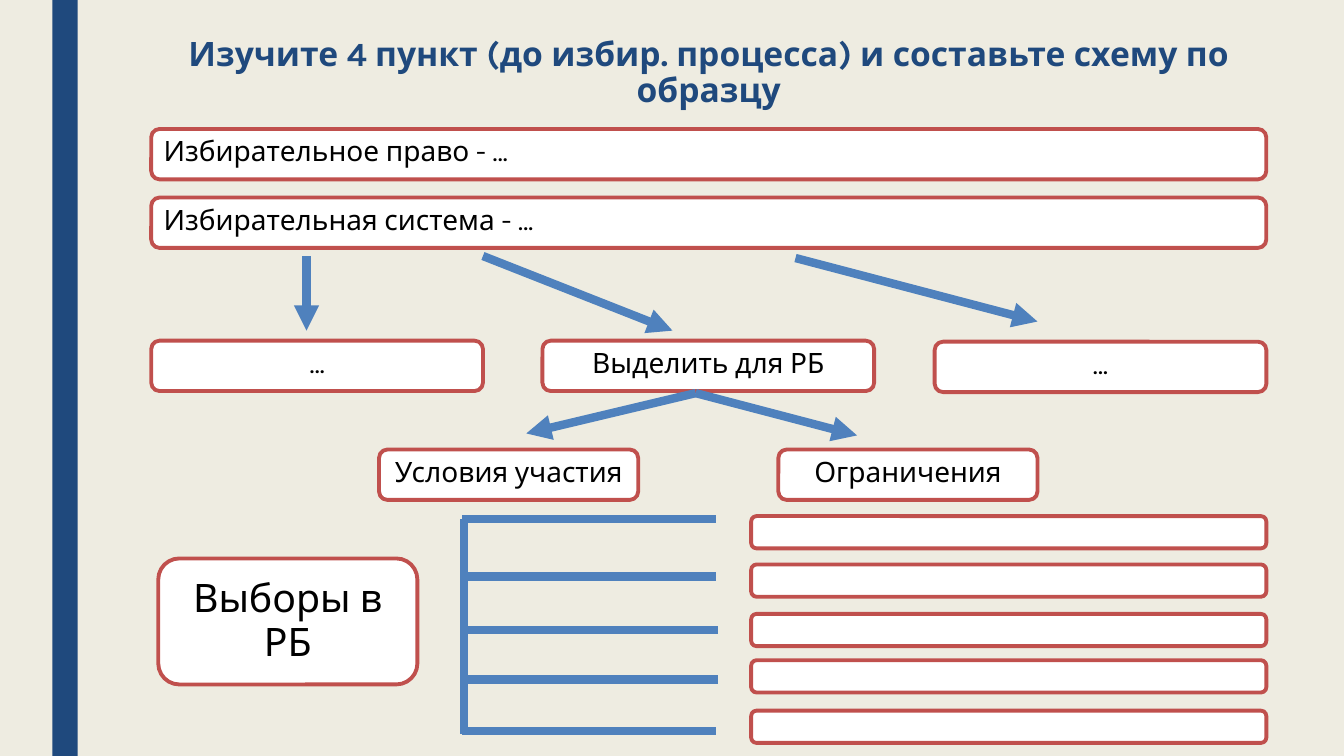
from dataclasses import dataclass

from lxml import etree
from pptx import Presentation
from pptx.dml.color import RGBColor
from pptx.enum.shapes import MSO_CONNECTOR, MSO_SHAPE
from pptx.enum.text import MSO_ANCHOR, PP_ALIGN
from pptx.oxml.ns import qn
from pptx.util import Inches, Pt

RECTANGLE = MSO_SHAPE.RECTANGLE
ROUNDED = MSO_SHAPE.ROUNDED_RECTANGLE
STRAIGHT = MSO_CONNECTOR.STRAIGHT
LEFT, CENTER = PP_ALIGN.LEFT, PP_ALIGN.CENTER
TOP, MIDDLE = MSO_ANCHOR.TOP, MSO_ANCHOR.MIDDLE

FONT = "Karla"
COLORS = {
    "background": "EEECE1",
    "navy": "1F497D",
    "red": "C0504D",
    "blue": "4F81BD",
    "white": "FFFFFF",
    "black": "000000",
}


@dataclass
class Box:
    left: float
    top: float
    width: float
    height: float = 0.5
    text: str = ""
    align: PP_ALIGN = CENTER
    anchor: MSO_ANCHOR = TOP
    size: int = 20


@dataclass
class Line:
    start: tuple[float, float]
    end: tuple[float, float]
    arrow: bool = False


MARGIN, FULL_WIDTH = 1.5, 11.06
KIND_WIDTH, TOPIC_WIDTH = 3.29, 2.57
ANSWER_TOPS = [5.12, 5.6, 6.09, 6.55, 7.05]
BRANCH_LENGTH = 2.52
BRANCH_STARTS = [(4.58, 5.15), (4.58, 5.72), (4.6, 6.25), (4.6, 6.74), (4.58, 7.25)]

BOXES = [
    # Definitions
    Box(MARGIN, 1.28, FULL_WIDTH, text="Избирательное право - …", align=LEFT),
    Box(MARGIN, 1.96, FULL_WIDTH, text="Избирательная система - …", align=LEFT),
    # Kinds of electoral system
    Box(MARGIN, 3.38, KIND_WIDTH, text="…"),
    Box(5.38, 3.38, KIND_WIDTH, text="Выделить для РБ"),
    Box(9.27, 3.39, KIND_WIDTH, text="…"),
    # Topics of participation
    Box(3.76, 4.46, TOPIC_WIDTH, text="Условия участия"),
    Box(7.72, 4.46, TOPIC_WIDTH, text="Ограничения"),
    Box(1.57, 5.54, TOPIC_WIDTH, 1.25, "Выборы в РБ", anchor=MIDDLE, size=28),
    # Empty answers
    *(Box(7.45, top, 5.11, 0.32) for top in ANSWER_TOPS),
]

LINES = [
    # Arrows to the kinds and topics
    Line((3.04, 2.54), (3.04, 3.28), True),
    Line((4.79, 2.54), (6.67, 3.28), True),
    Line((7.89, 2.56), (10.29, 3.19), True),
    Line((6.9, 3.9), (5.22, 4.3), True),
    Line((6.9, 3.9), (8.5, 4.32), True),
    # Bracket with branches
    Line((4.6, 5.15), (4.6, 7.28)),
    *(Line((x + BRANCH_LENGTH, y), (x, y)) for x, y in BRANCH_STARTS),
]


def rgb(name: str) -> RGBColor:
    return RGBColor.from_string(COLORS[name])


def write(shape, text: str, size: int, color: str, align: PP_ALIGN,
          anchor: MSO_ANCHOR, spacing: float, bold: bool = False) -> None:
    frame = shape.text_frame
    frame.word_wrap = True
    frame.vertical_anchor = anchor
    para = frame.paragraphs[0]
    para.text = text
    para.alignment = align
    para.line_spacing = spacing
    para.space_before = Pt(0)
    para.font.name = FONT
    para.font.size = Pt(size)
    para.font.bold = bold
    para.font.color.rgb = rgb(color)


def draw_box(page, box: Box) -> None:
    shape = page.shapes.add_shape(ROUNDED, Inches(box.left), Inches(box.top),
                                  Inches(box.width), Inches(box.height))
    shape.shadow.inherit = False
    shape.fill.solid()
    shape.fill.fore_color.rgb = rgb("white")
    shape.line.color.rgb = rgb("red")
    shape.line.width = Pt(2.75)
    if box.text:
        write(shape, box.text, box.size, "black", box.align, box.anchor, 0.94)


def draw_line(page, line: Line) -> None:
    connector = page.shapes.add_connector(
        STRAIGHT, *(Inches(value) for value in line.start + line.end))
    connector.line.color.rgb = rgb("blue")
    connector.line.width = Pt(6)
    properties = connector._element.spPr
    if line.arrow:
        outline = properties.find(qn("a:ln"))
        etree.SubElement(outline, qn("a:tailEnd"), type="triangle")
    etree.SubElement(properties, qn("a:effectLst"))


def main() -> None:
    deck = Presentation()
    deck.slide_width, deck.slide_height = Inches(13.33), Inches(7.5)
    page = deck.slides.add_slide(deck.slide_layouts[5])
    page.background.fill.solid()
    page.background.fill.fore_color.rgb = rgb("background")

    # Side bar
    bar = page.shapes.add_shape(RECTANGLE, Inches(0.52), 0, Inches(0.25), Inches(7.5))
    bar.shadow.inherit = False
    bar.fill.solid()
    bar.fill.fore_color.rgb = rgb("navy")
    bar.line.fill.background()

    # Title
    title = page.shapes.title
    title.left, title.top = Inches(MARGIN), Inches(0.36)
    title.width, title.height = Inches(FULL_WIDTH), Inches(0.74)
    write(title, "Изучите 4 пункт (до избир. процесса) и составьте схему по образцу",
          24, "navy", CENTER, MIDDLE, 0.89, bold=True)

    # Scheme
    for box in BOXES:
        draw_box(page, box)
    for line in LINES:
        draw_line(page, line)

    deck.save("out.pptx")


if __name__ == "__main__":
    main()
